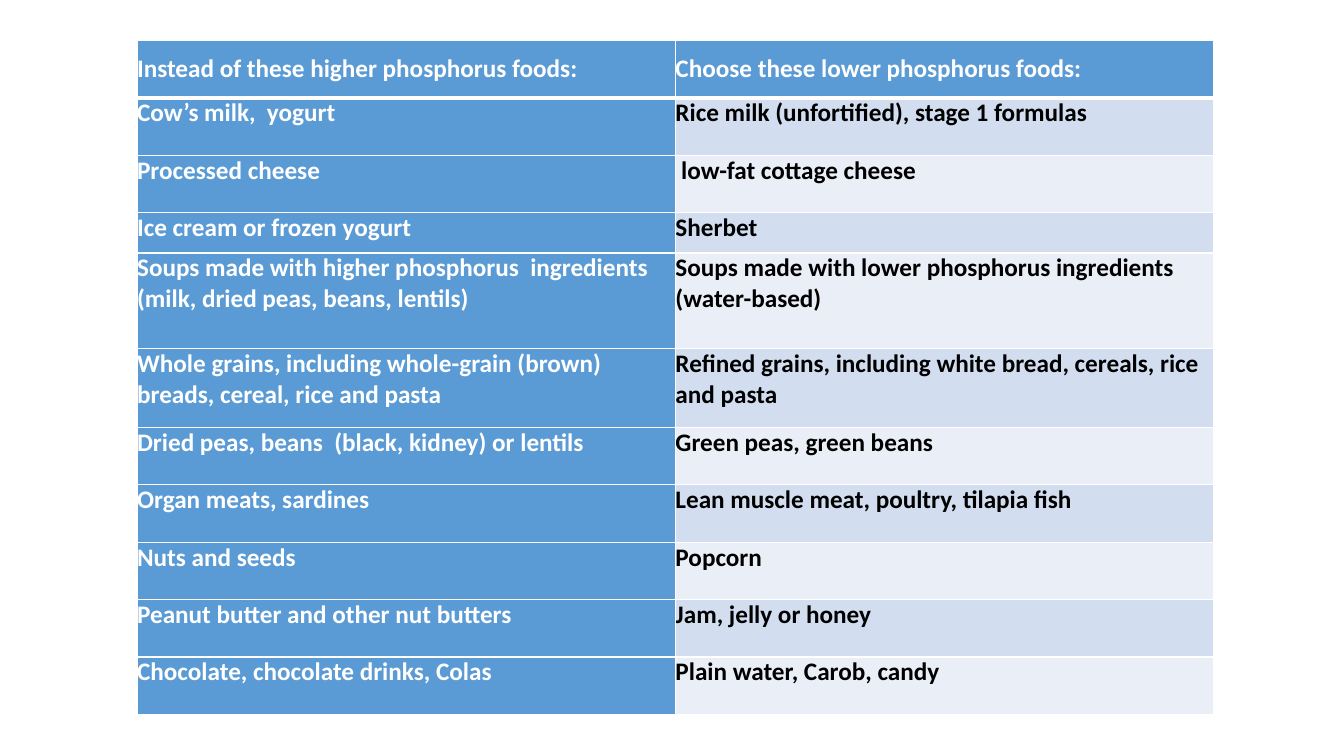
import pptx
import pptx.dml.color
import pptx.enum.text
import pptx.oxml
import pptx.oxml.ns
import pptx.util

Inches = pptx.util.Inches
Pt = pptx.util.Pt
RGBColor = pptx.dml.color.RGBColor
Anchor = pptx.enum.text.MSO_ANCHOR

WHITE = RGBColor(0xFF, 0xFF, 0xFF)
BLACK = RGBColor(0x00, 0x00, 0x00)
BLUE = RGBColor(0x5B, 0x9B, 0xD5)
BANDS = (RGBColor(0xD2, 0xDE, 0xEF), RGBColor(0xEA, 0xEF, 0xF7))

THIN, THICK = 1, 3
COLUMN_WIDTH = 5.34
ROW_HEIGHT = 0.57
SPECIAL_HEIGHTS = {3: 0.4, 4: 0.95, 5: 0.78}

FOODS = [
    ("Instead of these higher phosphorus foods:", "Choose these lower phosphorus foods:"),
    ("Cow’s milk,  yogurt", "Rice milk (unfortified), stage 1 formulas"),
    ("Processed cheese", " low-fat cottage cheese"),
    ("Ice cream or frozen yogurt", "Sherbet"),
    ("Soups made with higher phosphorus  ingredients (milk, dried peas, beans, lentils)",
     "Soups made with lower phosphorus ingredients (water-based)"),
    ("Whole grains, including whole-grain (brown) breads, cereal, rice and pasta",
     "Refined grains, including white bread, cereals, rice and pasta"),
    ("Dried peas, beans  (black, kidney) or lentils", "Green peas, green beans"),
    ("Organ meats, sardines", "Lean muscle meat, poultry, tilapia fish"),
    ("Nuts and seeds", "Popcorn"),
    ("Peanut butter and other nut butters", "Jam, jelly or honey"),
    ("Chocolate, chocolate drinks, Colas", "Plain water, Carob, candy"),
]


def apply_format(target, values):
    for name, value in values.items():
        setattr(target, name, value)


class FoodSlide:
    font_format = {"name": "Calibri", "size": Pt(18), "bold": True}
    cell_format = {"margin_left": 0, "margin_top": 0, "margin_right": 0, "margin_bottom": 0}

    def __init__(self, deck):
        self.page = deck.slides.add_slide(deck.slide_layouts[6])

    def add_food_table(self, left, top, foods):
        heights = [SPECIAL_HEIGHTS.get(index, ROW_HEIGHT) for index in range(len(foods))]
        frame = self.page.shapes.add_table(
            len(foods), 2, Inches(left), Inches(top),
            Inches(2 * COLUMN_WIDTH), Inches(sum(heights)))
        table = frame.table
        for column in table.columns:
            column.width = Inches(COLUMN_WIDTH)
        for row_index, (height, texts) in enumerate(zip(heights, foods)):
            table.rows[row_index].height = Inches(height)
            for column_index, text in enumerate(texts):
                self.format_cell(table.cell(row_index, column_index), text, row_index, column_index)

    def format_cell(self, cell, text, row_index, column_index):
        is_header = row_index == 0
        on_blue = is_header or column_index == 0
        apply_format(cell, self.cell_format)
        cell.vertical_anchor = Anchor.MIDDLE if is_header else Anchor.TOP
        self.add_borders(cell, top=THICK if row_index == 1 else THIN,
                         bottom=THICK if is_header else THIN)
        cell.fill.solid()
        cell.fill.fore_color.rgb = BLUE if on_blue else BANDS[(row_index - 1) % 2]
        para = cell.text_frame.paragraphs[0]
        para.space_after = Pt(11.2)
        span = para.add_run()
        span.text = text
        apply_format(span.font, self.font_format)
        span.font.color.rgb = WHITE if on_blue else BLACK

    def add_borders(self, cell, top, bottom):
        properties = cell._tc.get_or_add_tcPr()
        for side, width in (("L", THIN), ("R", THIN), ("T", top), ("B", bottom)):
            properties.append(pptx.oxml.parse_xml(
                f'<a:ln{side} {pptx.oxml.ns.nsdecls("a")} w="{Pt(width)}">'
                f'<a:solidFill><a:srgbClr val="{WHITE}"/></a:solidFill></a:ln{side}>'))


def main():
    deck = pptx.Presentation()
    deck.slide_width = Inches(13.33)
    deck.slide_height = Inches(7.5)
    FoodSlide(deck).add_food_table(1.36, 0.4, FOODS)
    deck.save("out.pptx")


if __name__ == "__main__":
    main()
